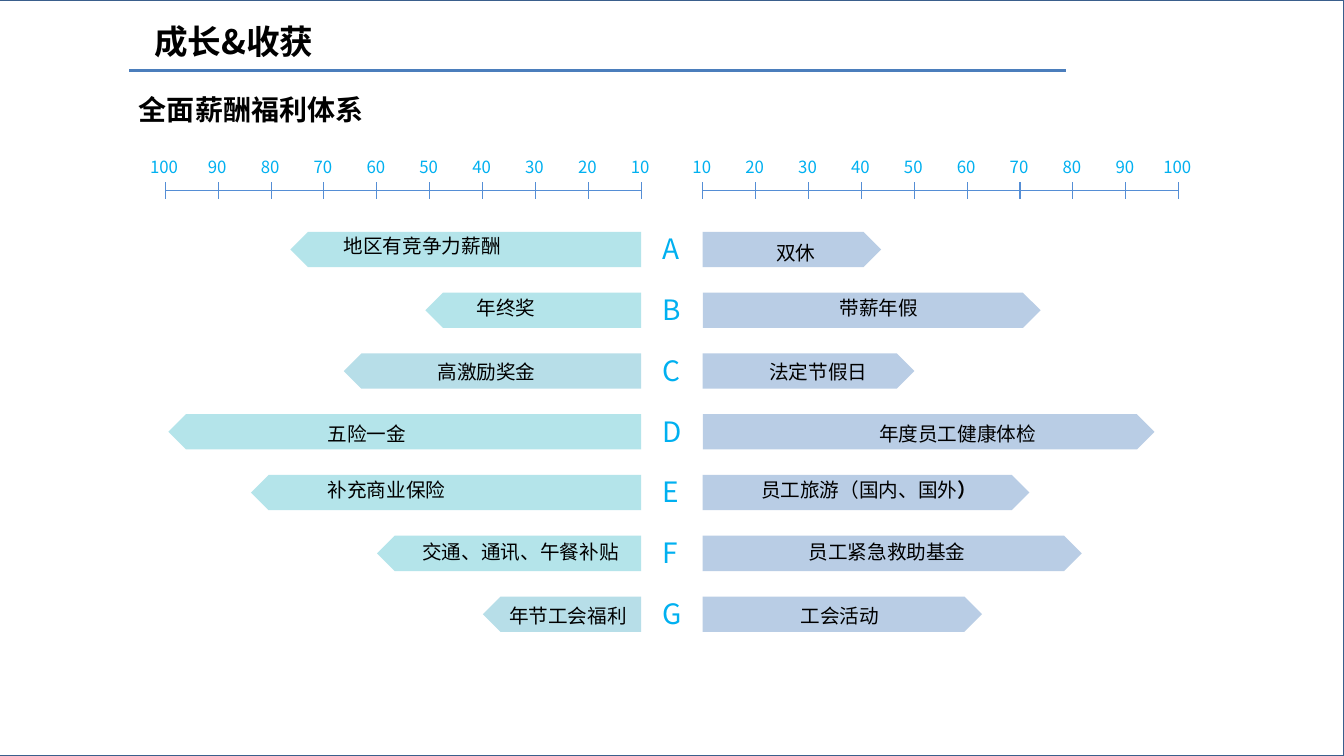
import pptx
import pptx.util
import pptx.dml.color
import pptx.enum.shapes
import pptx.enum.text
import pptx.oxml
import pptx.oxml.ns

FONT = "Noto Sans CJK SC"
WIDTH, HEIGHT = 13.33, 7.5
TITLE = "成长&收获"
SUBTITLE = "全面薪酬福利体系"
SCALE = range(10, 101, 10)
LETTERS = [("A", 0.4), ("B", 0.38), ("C", 0.39), ("D", 0.42),
           ("E", 0.36), ("F", 0.36), ("G", 0.41)]
PAY = [
    ("地区有竞争力薪酬", 3.48, "B4E4EA", 3.31, 2.27),
    ("年终奖", 2.14, "B4E4EA", 4.63, 2.89),
    ("高激励奖金", 2.95, "B7DEE8", 4.24, 3.52),
    ("五险一金", 4.69, "B4E4EA", 3.15, 4.14),
    ("补充商业保险", 3.87, "B4E4EA", 3.15, 4.69),
    ("交通、通讯、午餐补贴", 2.62, "B4E4EA", 4.09, 5.31),
    ("年节工会福利", 1.57, "B7DEE8", 4.95, 5.94),
]
CARE = [
    ("双休", 1.77, "B9CDE5", 7.6, 2.34),
    ("带薪年假", 3.35, "B9CDE5", 8.23, 2.89),
    ("法定节假日", 2.1, "B9CDE5", 7.53, 3.52),
    ("年度员工健康体检", 4.48, "B9CDE5", 8.62, 4.14),
    ("员工旅游（国内、国外）", 3.24, "B9CDE5", 7.45, 4.69),
    ("员工紧急救助基金", 3.76, "B9CDE5", 7.92, 5.31),
    ("工会活动", 2.77, "B9CDE5", 7.84, 5.94),
]
SIDES = [(6.36, -1, PAY), (6.97, 1, CARE)]
AXIS_TOP, TICK, STEP = 1.89, 0.08, 4.72 / 9
ROW_TOP, ROW_STEP, BAR_HEIGHT = 2.3, 0.603, 0.35
INSETS, CHARACTER = 0.22, 0.2

inch = pptx.util.Inches


def color(value):
    return pptx.dml.color.RGBColor.from_string(value)


def style(paragraph, size, shade, bold=False):
    font = paragraph.font
    font.name, font.size, font.bold = FONT, pptx.util.Pt(size), bold
    font.color.rgb = color(shade)
    latin = paragraph._p.find(".//" + pptx.oxml.ns.qn("a:latin"))
    latin.addnext(pptx.oxml.parse_xml(
        f'<a:ea {pptx.oxml.ns.nsdecls("a")} typeface="{FONT}"/>'))


def write(page, text, left, top, width, height, size, shade="000000", bold=False):
    box = page.shapes.add_textbox(inch(left), inch(top), inch(width), inch(height))
    box.text_frame.word_wrap = False
    paragraph = box.text_frame.paragraphs[0]
    plain = text.removesuffix("）")
    paragraph.add_run().text = plain
    if plain != text:
        span = paragraph.add_run()
        span.text = "）"
        span.font.bold = True
    style(paragraph, size, shade, bold)
    return box


def draw_line(shapes, start, end, shade, weight):
    line = shapes.add_connector(pptx.enum.shapes.MSO_CONNECTOR.STRAIGHT,
                                *map(inch, start + end))
    line.line.color.rgb = color(shade)
    line.line.width = pptx.util.Pt(weight)
    line.element.spPr.append(pptx.oxml.parse_xml(
        f'<a:effectLst {pptx.oxml.ns.nsdecls("a")}/>'))


def draw_shape(page, kind, left, top, width, height, fill):
    shape = page.shapes.add_shape(kind, *map(inch, (left, top, width, height)))
    shape.shadow.inherit = False
    shape.fill.solid()
    shape.fill.fore_color.rgb = color(fill)
    shape.line.fill.background()
    return shape


def draw_heading(page):
    title = page.shapes.title
    title.left, title.top, title.width, title.height = map(inch, (1.43, 0.16, 2.42, 0.5))
    title.text_frame.text = TITLE
    title.text_frame.vertical_anchor = pptx.enum.text.MSO_ANCHOR.MIDDLE
    paragraph = title.text_frame.paragraphs[0]
    paragraph.alignment = pptx.enum.text.PP_ALIGN.LEFT
    style(paragraph, 24, "000000", True)
    subtitle = write(page, SUBTITLE, 1.28, 0.86, 2.45, 0.44, 20, bold=True)
    subtitle.text_frame.vertical_anchor = pptx.enum.text.MSO_ANCHOR.MIDDLE


def draw_axis(page, base, direction):
    axis = page.shapes.add_group_shape().shapes
    ticks = [base + direction * STEP * index for index in range(len(SCALE))]
    draw_line(axis, (min(ticks), AXIS_TOP), (max(ticks), AXIS_TOP), "558ED5", 0.75)
    for value, tick in zip(SCALE, ticks):
        draw_line(axis, (tick, AXIS_TOP + TICK), (tick, AXIS_TOP - TICK), "558ED5", 0.75)
        width = 0.2 + 0.1 * len(str(value))
        write(page, str(value), tick - width / 2, 1.51, width, 0.3, 12, "00B0F0")


def draw_bars(page, base, direction, benefits):
    for row, (name, length, fill, left, top) in enumerate(benefits):
        start = base if direction > 0 else base - length
        bar = draw_shape(page, pptx.enum.shapes.MSO_SHAPE.PENTAGON, start,
                         ROW_TOP + row * ROW_STEP, length, BAR_HEIGHT, fill)
        if direction < 0:
            bar.element.spPr.xfrm.set("flipH", "1")
        write(page, name, left, top, INSETS + CHARACTER * len(name), 0.34, 14)


def main():
    deck = pptx.Presentation()
    deck.slide_width, deck.slide_height = inch(WIDTH), inch(HEIGHT)
    page = deck.slides.add_slide(deck.slide_layouts[5])
    frame = draw_shape(page, pptx.enum.shapes.MSO_SHAPE.RECTANGLE,
                       -0.02, 0, WIDTH + 0.02, HEIGHT, "FFFFFF")
    frame.line.color.rgb = color("3A5F8C")
    frame.line.width = pptx.util.Pt(2)
    page.shapes._spTree.append(page.shapes.title.element)
    draw_line(page.shapes, (1.28, 0.7), (10.57, 0.7), "4B7EBC", 2)
    draw_heading(page)
    for base, direction, benefits in SIDES:
        draw_axis(page, base, direction)
        draw_bars(page, base, direction, benefits)
    for row, (letter, width) in enumerate(LETTERS):
        write(page, letter, 6.47, ROW_TOP - 0.05 + row * ROW_STEP, width, 0.44, 20, "00B0F0")
    deck.save("out.pptx")


if __name__ == "__main__":
    main()
